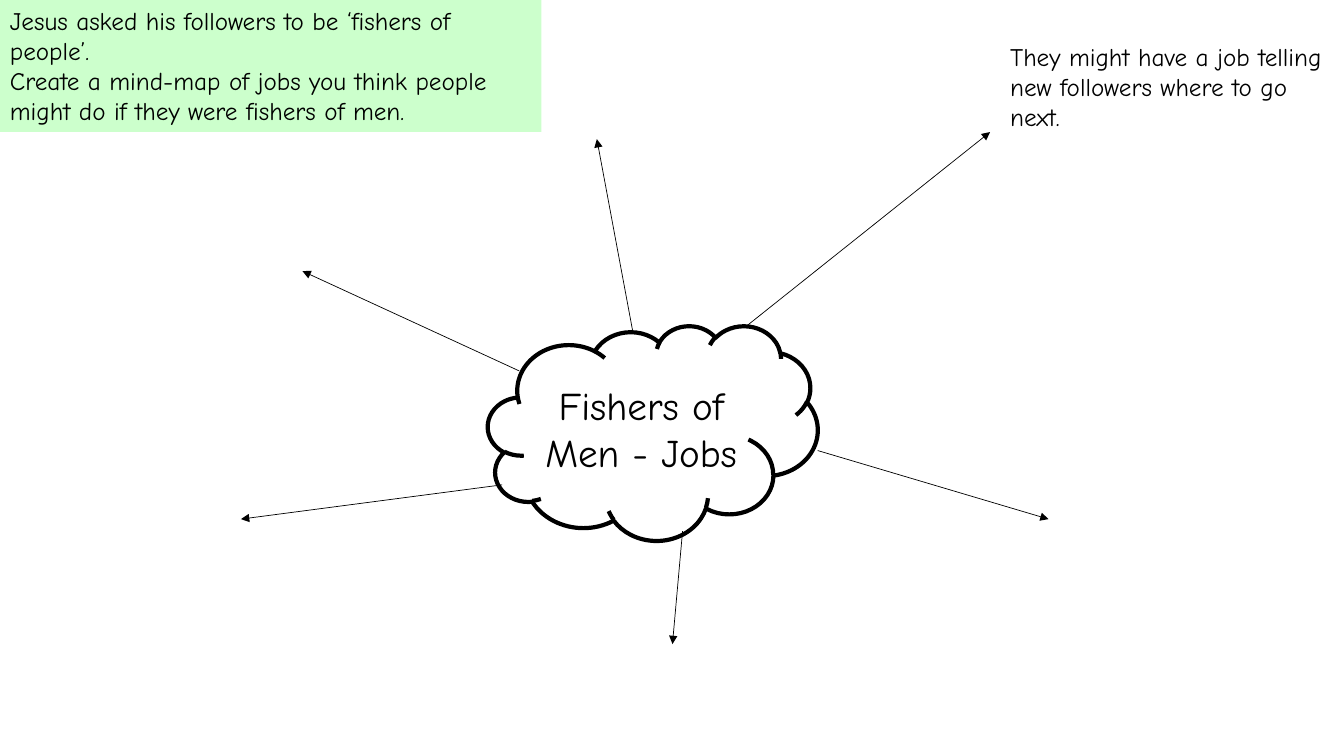
from lxml import etree
from pptx import Presentation
from pptx.dml.color import RGBColor
from pptx.enum import shapes, text
from pptx.oxml import ns
from pptx.util import Inches, Pt

FONT = "Comic Neue"
COLORS = {"ink": "000000", "paper": "FFFFFF", "mint": "CCFFCC"}
HUES = {name: RGBColor.from_string(code) for name, code in COLORS.items()}

deck = Presentation()
deck.slide_width, deck.slide_height = Inches(13.33), Inches(7.5)
slide = deck.slides.add_slide(deck.slide_layouts[6])


def write(shape, lines, size, align, anchor):
    frame = shape.text_frame
    frame.word_wrap = True
    frame.vertical_anchor = anchor
    for i, line in enumerate(lines):
        para = frame.paragraphs[0] if i == 0 else frame.add_paragraph()
        para.alignment = align
        run = para.add_run()
        run.text = line
        run.font.name, run.font.size = FONT, Pt(size)
        run.font.color.rgb = HUES["ink"]


def add_form(kind, box, fill):
    shape = slide.shapes.add_shape(kind, *map(Inches, box))
    shape.shadow.inherit = False
    shape.fill.solid()
    shape.fill.fore_color.rgb = HUES[fill]
    return shape


left, top = text.PP_ALIGN.LEFT, text.MSO_ANCHOR.TOP

# Task box
task = add_form(shapes.MSO_SHAPE.RECTANGLE, (0, 0, 5.37, 1.31), "mint")
task.line.fill.background()
write(task, [
    "Jesus asked his followers to be ‘fishers of people’.",
    "Create a mind-map of jobs you think people might do if they were fishers of men.",
], 18, left, top)

# Central cloud
cloud = add_form(shapes.MSO_SHAPE.CLOUD, (4.84, 3.23, 3.27, 2.13), "paper")
cloud.line.color.rgb = HUES["ink"]
cloud.line.width = Pt(3)
write(cloud, ["Fishers of Men - Jobs"], 28,
      text.PP_ALIGN.CENTER, text.MSO_ANCHOR.MIDDLE)

# Arrows from the cloud to the ideas
arrows = [
    (7.41, 3.23, 9.82, 1.31),
    (8.11, 4.47, 10.4, 5.15),
    (6.77, 5.27, 6.67, 6.39),
    (4.98, 4.81, 2.39, 5.15),
    (5.15, 3.68, 3, 2.69),
    (6.28, 3.31, 5.92, 1.38),
]
for ends in arrows:
    arrow = slide.shapes.add_connector(
        shapes.MSO_CONNECTOR.STRAIGHT, *map(Inches, ends))
    arrow.line.color.rgb = HUES["ink"]
    arrow.line.width = Pt(0.5)
    props = arrow.line._get_or_add_ln()
    etree.SubElement(props, ns.qn("a:tailEnd"), type="triangle")
    etree.SubElement(arrow._element.spPr, ns.qn("a:effectLst"))

# Example idea
idea = slide.shapes.add_textbox(*map(Inches, (9.92, 0.36, 3.32, 1.01)))
write(idea, ["They might have a job telling new followers where to go next."],
      18, left, top)

deck.save("out.pptx")
